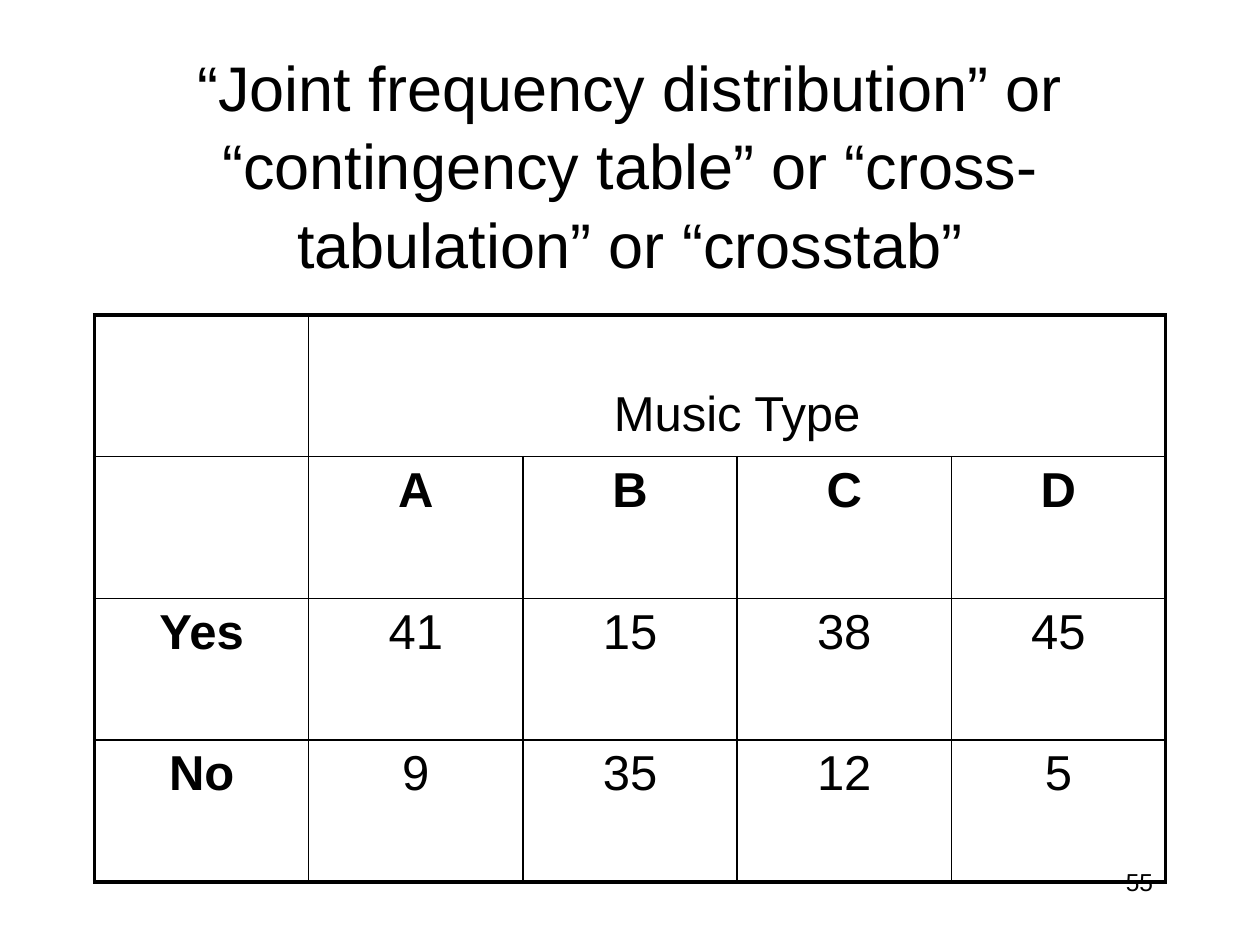
import pptx
import pptx.dml.color
import pptx.enum.text
import pptx.oxml
import pptx.oxml.ns
import pptx.util

Inches, Pt = pptx.util.Inches, pptx.util.Pt
PP_ALIGN = pptx.enum.text.PP_ALIGN
MSO_ANCHOR = pptx.enum.text.MSO_ANCHOR

TITLE = "“Joint frequency distribution” or “contingency table” or “cross-tabulation” or “crosstab”"
COLUMN_GROUP = "Music Type"
ROWS = [
    ["", COLUMN_GROUP, "", "", ""],
    ["", "A", "B", "C", "D"],
    ["Yes", "41", "15", "38", "45"],
    ["No", "9", "35", "12", "5"],
]
PAGE_NUMBER = "55"

THEME = {
    "font": "Arial", "ink": "000000",
    "title": 36, "table": 28, "page_number": 14,
    "outer_line": 2.25, "inner_line": 1,
}
TITLE_BOX = (0.75, 0.67, 8.5, 1.25)
TABLE_BOX = (0.75, 2.5, 8.5, 4.5)
PAGE_NUMBER_BOX = (7.17, 6.83, 2.08, 0.5)


def write(text_frame, text, size, alignment, bold=False):
    paragraph = text_frame.paragraphs[0]
    paragraph.alignment = alignment
    run = paragraph.add_run()
    run.text = text
    formats = {"name": THEME["font"], "size": Pt(size), "bold": bold}
    for name, value in formats.items():
        setattr(run.font, name, value)
    run.font.color.rgb = pptx.dml.color.RGBColor.from_string(THEME["ink"])
    return paragraph


def set_borders(cell, outer_sides):
    """Draw all four borders, heavier on the sides that bound the table."""
    properties = cell._tc.get_or_add_tcPr()
    for position, side in enumerate("LRTB"):
        points = THEME["outer_line" if side in outer_sides else "inner_line"]
        line = pptx.oxml.parse_xml(
            f'<a:ln{side} {pptx.oxml.ns.nsdecls("a")} w="{Pt(points)}">'
            f'<a:solidFill><a:srgbClr val="{THEME["ink"]}"/></a:solidFill></a:ln{side}>')
        properties.insert(position, line)


def add_title(slide):
    title = slide.shapes.title
    title.left, title.top, title.width, title.height = map(Inches, TITLE_BOX)
    title.text_frame.vertical_anchor = MSO_ANCHOR.MIDDLE
    title.text_frame.auto_size = pptx.enum.text.MSO_AUTO_SIZE.NONE
    paragraph = write(title.text_frame, TITLE, THEME["title"], PP_ALIGN.CENTER)
    paragraph.line_spacing = 1.04


def add_crosstab(slide):
    row_count, column_count = len(ROWS), len(ROWS[0])
    table = slide.shapes.add_table(row_count, column_count, *map(Inches, TABLE_BOX)).table
    table.first_row = table.horz_banding = False
    table.cell(0, 1).merge(table.cell(0, column_count - 1))
    for row, values in enumerate(ROWS):
        for column, value in enumerate(values):
            cell = table.cell(row, column)
            cell.fill.background()
            last_column = column + (cell.span_width if cell.is_merge_origin else 1)
            edges = {"L": column == 0, "R": last_column == column_count,
                     "T": row == 0, "B": row == row_count - 1}
            set_borders(cell, [side for side, on_edge in edges.items() if on_edge])
            if value:
                write(cell.text_frame, value, THEME["table"], PP_ALIGN.CENTER,
                      bold=row == 1 or column == 0)
            if value == COLUMN_GROUP:
                cell.vertical_anchor = MSO_ANCHOR.BOTTOM
                cell.margin_bottom = Inches(0.12)


def add_page_number(slide):
    text_frame = slide.shapes.add_textbox(*map(Inches, PAGE_NUMBER_BOX)).text_frame
    text_frame.word_wrap = True
    write(text_frame, PAGE_NUMBER, THEME["page_number"], PP_ALIGN.RIGHT)


def main():
    presentation = pptx.Presentation()
    presentation.slide_width, presentation.slide_height = Inches(10), Inches(7.5)
    slide = presentation.slides.add_slide(presentation.slide_layouts.get_by_name("Title Only"))
    add_title(slide)
    add_crosstab(slide)
    add_page_number(slide)
    presentation.save("out.pptx")


if __name__ == "__main__":
    main()
